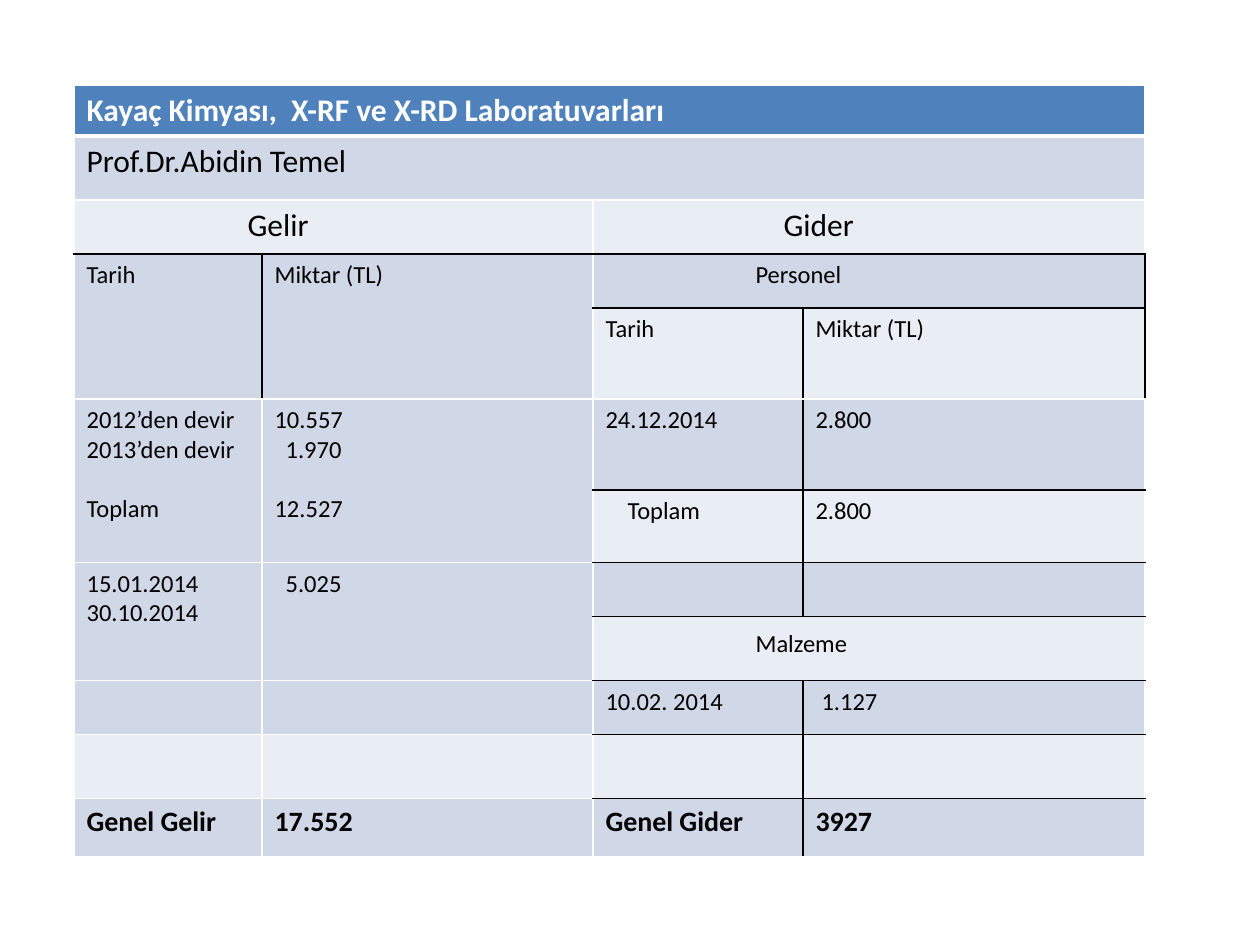
from lxml import etree
from pptx import Presentation, util as u
from pptx.dml.color import RGBColor
from pptx.oxml.ns import qn

PX = 914400 // 126
FONT = "Calibri"
WHITE = RGBColor(0xFF, 0xFF, 0xFF)
BLACK = RGBColor(0, 0, 0)
HEADER_BLUE = RGBColor(0x4F, 0x81, 0xBD)
BAND_DARK = RGBColor(0xD0, 0xD8, 0xE8)
BAND_LIGHT = RGBColor(0xE9, 0xED, 0xF4)

LEFT, TOP = 74, 85
COLUMNS = [188, 331, 210, 342]
ROWS = [49, 64, 54, 54, 91, 91, 54, 54, 64, 54, 64, 58]
LINE = 30  # height of one 14 pt line

# First and last (row, column) of each merged block
MERGES = [((0, 0), (0, 3)), ((1, 0), (1, 3)), ((2, 0), (2, 1)), ((2, 2), (2, 3)),
          ((3, 0), (4, 0)), ((3, 1), (4, 1)), ((3, 2), (3, 3)),
          ((5, 0), (6, 0)), ((5, 1), (6, 1)), ((7, 0), (8, 0)), ((7, 1), (8, 1)),
          ((8, 2), (8, 3))]

# (row, column): paragraphs as (text, indent, space before)
ENTRIES = {
    (0, 0): [("Kayaç Kimyası,  X-RF ve X-RD Laboratuvarları", 0, 0)],
    (1, 0): [("Prof.Dr.Abidin Temel", 0, 0)],
    (2, 0): [("Gelir", 161, 0)],
    (2, 2): [("Gider", 178, 0)],
    (3, 0): [("Tarih", 0, 0)],
    (3, 1): [("Miktar (TL)", 0, 0)],
    (3, 2): [("Personel", 150, 0)],
    (4, 2): [("Tarih", 0, 0)],
    (4, 3): [("Miktar (TL)", 0, 0)],
    (5, 0): [("2012’den devir", 0, 0), ("2013’den devir", 0, 0), ("Toplam", 0, LINE)],
    (5, 1): [("10.557", 0, 0), ("1.970", 11, 0), ("12.527", 0, LINE)],
    (5, 2): [("24.12.2014", 0, 0)],
    (5, 3): [("2.800", 0, 0)],
    (6, 2): [("Toplam", 22, 0)],
    (6, 3): [("2.800", 0, 0)],
    (7, 0): [("15.01.2014", 0, 0), ("30.10.2014", 0, 0)],
    (7, 1): [("5.025", 11, 0)],
    (8, 2): [("Malzeme", 150, 0)],
    (9, 2): [("10.02. 2014", 0, 0)],
    (9, 3): [("1.127", 6, 0)],
    (11, 0): [("Genel Gelir", 0, 0)],
    (11, 1): [("17.552", 0, 0)],
    (11, 2): [("Genel Gider", 0, 0)],
    (11, 3): [("3927", 0, 0)],
}


def px(length):
    return u.Emu(length * PX)


def rule_is_black(line, column):
    """Whether the horizontal grid line above row number `line` is black."""
    return line == 3 or (column >= 2 and line in (4, 6, 7, 8, 9, 10, 11))


def divider_is_black(row, line):
    """Whether the vertical grid line left of column number `line` is black."""
    return (line == 3 and row >= 4) or (line in (1, 4) and row in (3, 4))


def add_border(cell, position, side, color, width):
    border = etree.Element(qn(f"a:ln{side}"), w=str(u.Pt(width)))
    fill = etree.SubElement(border, qn("a:solidFill"))
    etree.SubElement(fill, qn("a:srgbClr"), val=str(color))
    cell._tc.get_or_add_tcPr().insert(position, border)


def style_cell(cell, row, column):
    band = BAND_DARK if row % 2 else BAND_LIGHT
    cell.fill.solid()
    cell.fill.fore_color.rgb = HEADER_BLUE if row == 0 else band
    height = cell.span_height if cell.is_merge_origin else 1
    width = cell.span_width if cell.is_merge_origin else 1
    sides = {
        "L": divider_is_black(row, column),
        "R": divider_is_black(row, column + width),
        "T": rule_is_black(row, column),
        "B": rule_is_black(row + height, column),
    }
    for position, (side, black) in enumerate(sides.items()):
        under_header = (row == 0 and side == "B") or (row == 1 and side == "T")
        add_border(cell, position, side, BLACK if black else WHITE, 3 if under_header else 1)


def write_entry(cell, paragraphs, size, color, bold):
    frame = cell.text_frame
    for number, (wording, indent, gap) in enumerate(paragraphs):
        paragraph = frame.add_paragraph() if number else frame.paragraphs[0]
        if indent:
            paragraph._p.get_or_add_pPr().set("marL", str(px(indent)))
        if gap:
            paragraph.space_before = u.Pt(round(gap * 72 / 126))
        run = paragraph.add_run()
        run.text = wording
        run.font.name = FONT
        run.font.size = u.Pt(size)
        run.font.bold = bold
        run.font.color.rgb = color


def add_account_table(slide):
    frame = slide.shapes.add_table(len(ROWS), len(COLUMNS), px(LEFT), px(TOP),
                                   px(sum(COLUMNS)), px(sum(ROWS)))
    account = frame.table
    account.first_row = account.horz_banding = False
    for column, width in zip(account.columns, COLUMNS):
        column.width = px(width)
    for row, height in zip(account.rows, ROWS):
        row.height = px(height)
    for first, last in MERGES:
        account.cell(*first).merge(account.cell(*last))
    for row in range(len(ROWS)):
        for column in range(len(COLUMNS)):
            style_cell(account.cell(row, column), row, column)
    total_row = len(ROWS) - 1
    for (row, column), paragraphs in ENTRIES.items():
        size = 18 if row < 3 else 16 if row == total_row else 14
        write_entry(account.cell(row, column), paragraphs, size,
                    WHITE if row == 0 else BLACK, row in (0, total_row))
    for column in (0, 1):
        account.cell(5, column).margin_bottom = px(LINE + 8)
    account.cell(8, 2).margin_top = px(13)


def main():
    deck = Presentation()
    deck.slide_width, deck.slide_height = px(1260), px(945)
    slide = deck.slides.add_slide(deck.slide_layouts[6])
    add_account_table(slide)
    deck.save("out.pptx")


if __name__ == "__main__":
    main()
